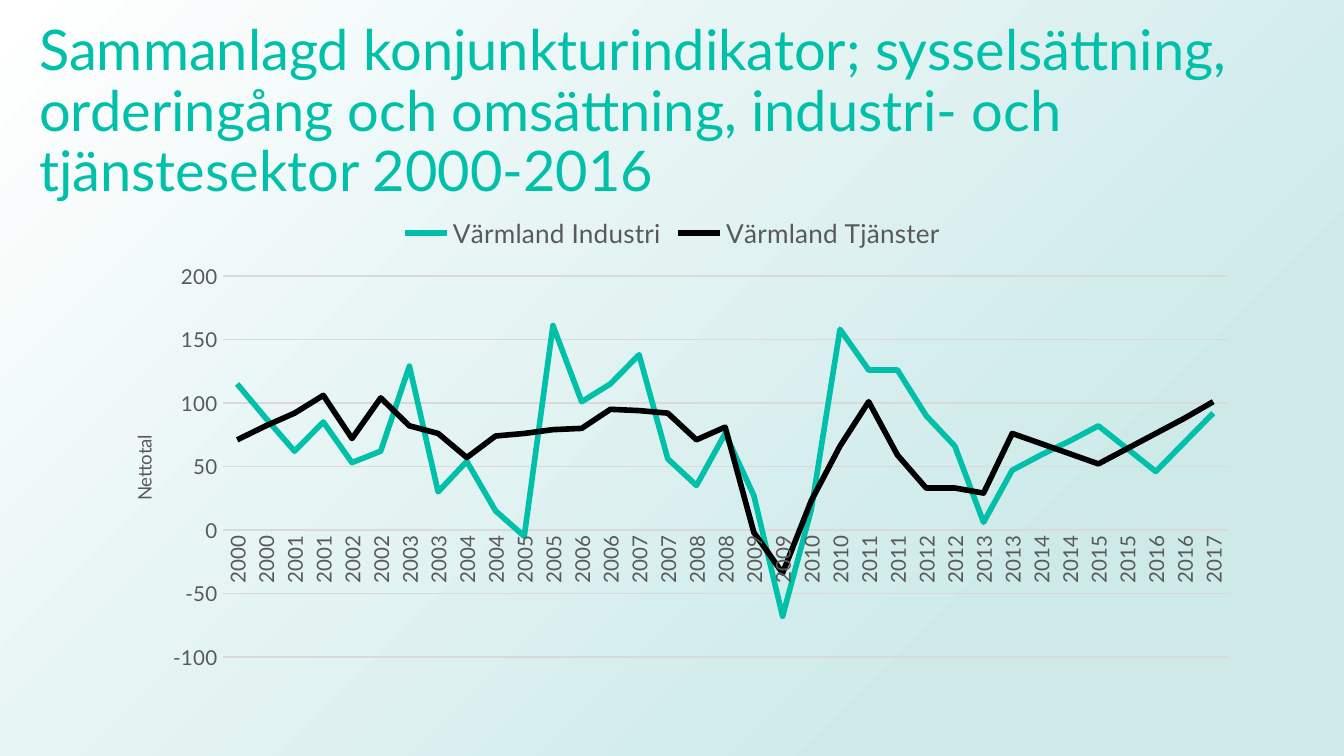
import lxml.etree
import pptx
import pptx.chart.data
import pptx.dml.color
import pptx.enum.chart
import pptx.enum.text
import pptx.oxml
import pptx.oxml.ns
import pptx.util

EMU_PER_PX = 914400 / 134.4
COLORS = {
    "teal": "00C0A9",
    "black": "000000",
    "gray": "595959",
    "grid": "D9D9D9",
    "mist": "CDEAE9",
    "white": "FFFFFF",
}
FONT = "Lato"
TITLE = (
    "Sammanlagd konjunkturindikator; sysselsättning, orderingång och omsättning, "
    "industri- och tjänstesektor 2000-2016"
)
YEARS = [str(2000 + index // 2) for index in range(35)]
SERIES = [
    ("Värmland Industri", "teal",
     [115, 88, 62, 85, 53, 62, 129, 30, 54, 15, -5, 161, 101, 115, 138, 56, 35, 76,
      27, -68, 16, 158, 126, 126, 90, 66, 6, 47, 59, 70, 82, 64, 46, 69, 92]),
    ("Värmland Tjänster", "black",
     [71, 82, 92, 106, 72, 104, 82, 76, 57, 74, 76, 79, 80, 95, 94, 92, 71, 81,
      -2, -34, 23, 66, 101, 59, 33, 33, 29, 76, 68, 60, 52, 64, 76, 88, 101]),
]


def px(length):
    return pptx.util.Emu(round(length * EMU_PER_PX))


def rgb(name):
    return pptx.dml.color.RGBColor.from_string(COLORS[name])


def set_values(target, values):
    for name, value in values.items():
        setattr(target, name, value)


def set_font(font, size, color):
    set_values(font, {"name": FONT, "size": pptx.util.Pt(size), "bold": False})
    font.color.rgb = rgb(color)


def set_line(line, color, width):
    line.color.rgb = rgb(color)
    line.width = pptx.util.Pt(width)


def manual_layout(values):
    layout = lxml.etree.Element(pptx.oxml.ns.qn("c:layout"))
    manual = lxml.etree.SubElement(layout, pptx.oxml.ns.qn("c:manualLayout"))
    for name, value in values.items():
        lxml.etree.SubElement(manual, pptx.oxml.ns.qn(f"c:{name}")).set("val", str(value))
    return layout


def paint_background(slide):
    fill = slide.background.fill
    fill.gradient()
    for stop, position, color in zip(fill.gradient_stops, (0.23, 1), ("mist", "white")):
        stop.position = position
        stop.color.rgb = rgb(color)
    gradient = slide.background._cSld.find(".//" + pptx.oxml.ns.qn("a:gradFill"))
    linear = gradient.find(pptx.oxml.ns.qn("a:lin"))
    circle = pptx.oxml.parse_xml(
        f'<a:path {pptx.oxml.ns.nsdecls("a")} path="circle">'
        '<a:fillToRect l="100000" t="100000"/></a:path>'
    )
    gradient.replace(linear, circle)


def add_title(slide, left, top, width, height):
    shape = slide.shapes.add_textbox(px(left), px(top), px(width), px(height))
    set_values(shape.text_frame, {
        "word_wrap": True,
        "vertical_anchor": pptx.enum.text.MSO_ANCHOR.MIDDLE,
    })
    paragraph = shape.text_frame.paragraphs[0]
    paragraph.text = TITLE
    paragraph.line_spacing = 0.9
    set_font(paragraph.font, 30, "teal")


def format_category_axis(axis):
    set_values(axis, {
        "major_tick_mark": pptx.enum.chart.XL_TICK_MARK.NONE,
        "minor_tick_mark": pptx.enum.chart.XL_TICK_MARK.NONE,
        "tick_label_position": pptx.enum.chart.XL_TICK_LABEL_POSITION.NEXT_TO_AXIS,
    })
    set_font(axis.tick_labels.font, 11, "gray")
    set_line(axis.format.line, "grid", 0.75)
    body = axis._element.find(".//" + pptx.oxml.ns.qn("a:bodyPr"))
    set_attributes = {"rot": "-5400000", "vert": "horz"}
    for name, value in set_attributes.items():
        body.set(name, value)
    skip = lxml.etree.Element(pptx.oxml.ns.qn("c:tickLblSkip"))
    skip.set("val", "1")
    axis._element.find(pptx.oxml.ns.qn("c:noMultiLvlLbl")).addprevious(skip)


def format_value_axis(axis):
    set_values(axis, {
        "minimum_scale": -100,
        "maximum_scale": 200,
        "major_unit": 50,
        "has_major_gridlines": True,
        "major_tick_mark": pptx.enum.chart.XL_TICK_MARK.NONE,
        "minor_tick_mark": pptx.enum.chart.XL_TICK_MARK.NONE,
    })
    set_values(axis.tick_labels, {"number_format": "0", "number_format_is_linked": False})
    set_font(axis.tick_labels.font, 11, "gray")
    set_line(axis.major_gridlines.format.line, "grid", 0.75)
    axis.format.line.fill.background()
    title = axis.axis_title
    title.text_frame.text = "Nettotal"
    set_font(title.text_frame.paragraphs[0].runs[0].font, 10, "gray")
    element = title._element
    for layout in element.findall(pptx.oxml.ns.qn("c:layout")):
        element.remove(layout)
    element.find(pptx.oxml.ns.qn("c:tx")).addnext(
        manual_layout({"xMode": "edge", "yMode": "edge", "x": 0.03, "y": 0.48})
    )


def add_indicator_chart(slide, left, top, width, height):
    data = pptx.chart.data.CategoryChartData()
    data.categories = YEARS
    for name, _, values in SERIES:
        data.add_series(name, values)
    chart = slide.shapes.add_chart(
        pptx.enum.chart.XL_CHART_TYPE.LINE, px(left), px(top), px(width), px(height), data
    ).chart
    set_values(chart, {"has_title": False, "has_legend": True})
    set_font(chart.font, 10, "black")
    set_values(chart.legend, {
        "position": pptx.enum.chart.XL_LEGEND_POSITION.TOP,
        "include_in_layout": False,
    })
    set_font(chart.legend.font, 14, "gray")
    chart.plots[0].vary_by_categories = False
    for series, (_, color, _) in zip(chart.plots[0].series, SERIES):
        series.smooth = False
        series.marker.style = pptx.enum.chart.XL_MARKER_STYLE.NONE
        set_line(series.format.line, color, 3)
    format_category_axis(chart.category_axis)
    format_value_axis(chart.value_axis)
    plot_area = chart._chartSpace.chart.plotArea
    for layout in plot_area.findall(pptx.oxml.ns.qn("c:layout")):
        plot_area.remove(layout)
    plot_area.insert(0, manual_layout({
        "layoutTarget": "inner", "xMode": "edge", "yMode": "edge",
        "x": round((223 - left) / width, 3), "y": round((276 - top) / height, 3),
        "w": round(1005 / width, 3), "h": round(381 / height, 3),
    }))


def main():
    presentation = pptx.Presentation()
    set_values(presentation, {"slide_width": px(1344), "slide_height": px(756)})
    slide = presentation.slides.add_slide(presentation.slide_layouts[6])
    paint_background(slide)
    add_title(slide, 26, 40, 1347, 146)
    add_indicator_chart(slide, 93, 202, 1159, 478)
    presentation.save("out.pptx")


if __name__ == "__main__":
    main()
